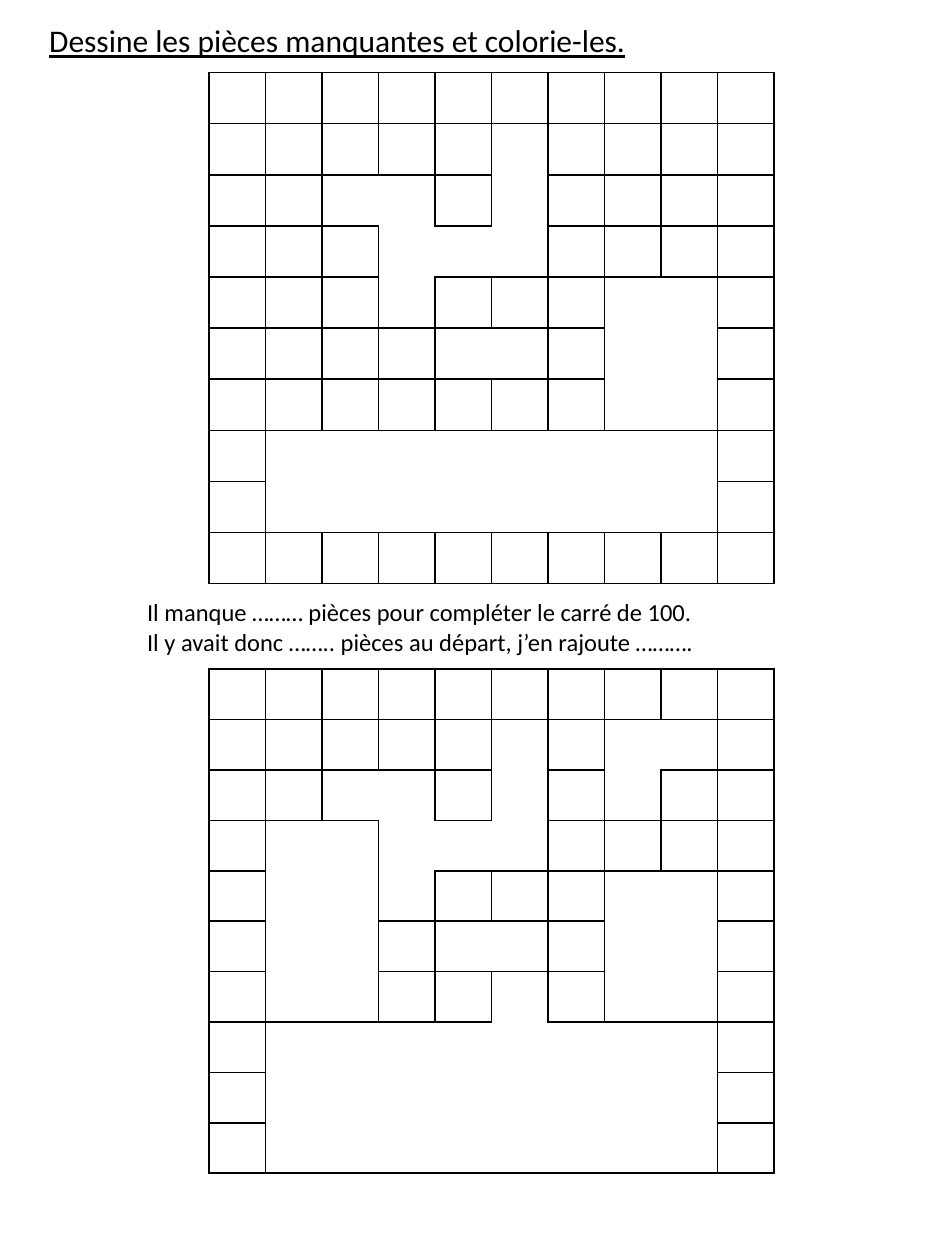
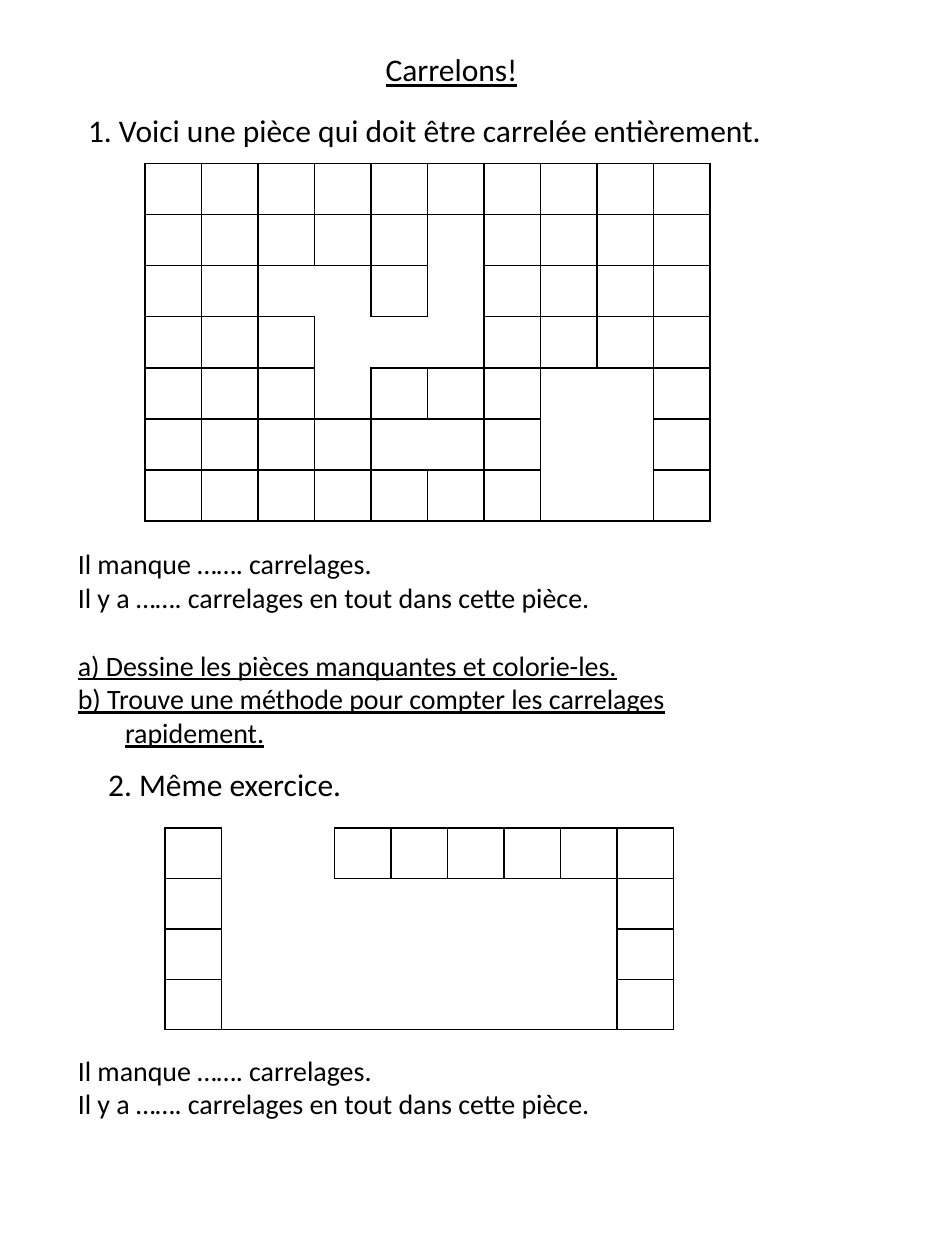
from dataclasses import dataclass

from lxml import etree
from pptx import Presentation
from pptx.dml.color import RGBColor
from pptx.enum.text import MSO_ANCHOR, MSO_AUTO_SIZE, PP_ALIGN
from pptx.oxml.ns import qn
from pptx.util import Pt

TOP, LEFT, NO_AUTOFIT = MSO_ANCHOR.TOP, PP_ALIGN.LEFT, MSO_AUTO_SIZE.NONE
TITLE_ONLY = 5


@dataclass(frozen=True)
class Theme:
    ink: str = "000000"
    font: str = "Calibri"
    heading: int = 18
    question: int = 16
    note: int = 14
    tile_width: float = 32.3
    line: float = 1


THEME = Theme()


def write(shape, box, lines, size, underlined=(), wrap=False):
    """Place a text shape and fill it; underlined holds line numbers."""
    shape.left, shape.top, shape.width, shape.height = map(Pt, box)
    frame = shape.text_frame
    frame.text = "\n".join(lines)
    frame.auto_size, frame.word_wrap = NO_AUTOFIT, wrap
    frame.vertical_anchor = TOP
    for number, paragraph in enumerate(frame.paragraphs):
        paragraph.alignment = LEFT
        font = paragraph.font
        font.name, font.size = THEME.font, Pt(size)
        font.color.rgb = RGBColor.from_string(THEME.ink)
        font.underline = number in underlined
    return frame.paragraphs


def add_tiling(slide, left, top, tile_height, plan, above=""):
    """Draw a plan of tiles: '.' is a tile, equal letters form one hole."""
    rows, columns = len(plan), len(plan[0])
    edge = "." * (columns + 2)
    padded = [f".{above}." if above else edge, *(f".{row}." for row in plan), edge]
    table = slide.shapes.add_table(
        rows, columns, Pt(left), Pt(top),
        Pt(columns * THEME.tile_width), Pt(rows * tile_height)).table
    table.first_row = table.horz_banding = False
    for column in table.columns:
        column.width = Pt(THEME.tile_width)
    for r, row in enumerate(table.rows, 1):
        row.height = Pt(tile_height)
        for c, cell in enumerate(row.cells, 1):
            cell.margin_top = cell.margin_bottom = 0
            properties = cell._tc.get_or_add_tcPr()
            here = padded[r][c]
            neighbours = {"lnL": padded[r][c - 1], "lnR": padded[r][c + 1],
                          "lnT": padded[r - 1][c], "lnB": padded[r + 1][c]}
            for side, neighbour in neighbours.items():
                border = etree.SubElement(properties, qn(f"a:{side}"), w=str(Pt(THEME.line)))
                if here == neighbour != ".":
                    etree.SubElement(border, qn("a:noFill"))
                else:
                    fill = etree.SubElement(border, qn("a:solidFill"))
                    etree.SubElement(fill, qn("a:srgbClr"), val=THEME.ink)
            cell.fill.background()


deck = Presentation()
deck.slide_width, deck.slide_height = Pt(540), Pt(720)
layout = deck.slide_layouts[TITLE_ONLY]

# Room plans
room = [
    "..........",
    ".....a....",
    "..aa.a....",
    "...aaa....",
    "...a...bb.",
    "....cc.bb.",
    ".......bb.",
]
hundred = room + [".dddddddd."] * 2 + [".........."]
hundred_with_more_holes = [
    "..........",
    ".....a.ee.",
    "..aa.a.e..",
    ".ffaaa....",
    ".ffa...bb.",
    ".ff.cc.bb.",
    ".ff..d.bb.",
] + [".dddddddd."] * 3
small_room = [".aa......"] + [".aaaaaaa."] * 3

# Slide 1: squares of one hundred
squares = deck.slides.add_slide(layout)
write(squares.shapes.title, (20.9, 8.6, 347.8, 51.1),
      ["Dessine les pièces manquantes et colorie-les."], THEME.heading, [0])
add_tiling(squares, 119.5, 41.5, 29.2, hundred)
write(squares.shapes.add_textbox(0, 0, 0, 0), (77, 337.7, 451.4, 41),
      ["Il manque ……… pièces pour compléter le carré de 100.",
       "Il y avait donc …….. pièces au départ, j’en rajoute ………."],
      THEME.note, wrap=True)
add_tiling(squares, 119.5, 382.4, 28.8, hundred_with_more_holes)

# Slide 2: tiling a room
tiling = deck.slides.add_slide(layout)
write(tiling.shapes.title, (213.1, 25.2, 90.7, 28.8), ["Carrelons!"], THEME.heading, [0])
for box, heading in [
    ((43.2, 59.8, 404.6, 28.8), "1. Voici une pièce qui doit être carrelée entièrement."),
    ((54.7, 433.6, 149, 28.8), "2. Même exercice."),
]:
    write(tiling.shapes.add_textbox(0, 0, 0, 0), box, [heading], THEME.heading)
add_tiling(tiling, 82.8, 93.4, 29.2, room)
add_tiling(tiling, 94.3, 473.2, 28.8, small_room, above=small_room[0])

# Questions under each room
counts = ["Il manque ……. carrelages.",
          "Il y a ……. carrelages en tout dans cette pièce."]
tasks = ["a) Dessine les pièces manquantes et colorie-les.",
         "b) Trouve une méthode pour compter les carrelages rapidement."]
questions = write(tiling.shapes.add_textbox(0, 0, 0, 0), (37.4, 308.9, 419.8, 123.8),
                  counts + tasks, THEME.question, [2, 3], wrap=True)
for task in questions[len(counts):]:
    indent = task._p.get_or_add_pPr()
    indent.set("marL", str(Pt(27)))
    indent.set("indent", str(Pt(-27)))
questions[len(counts)].space_before = Pt(19.5)
write(tiling.shapes.add_textbox(0, 0, 0, 0), (37.4, 598.3, 436.3, 46.1),
      counts, THEME.question, wrap=True)

deck.save("out.pptx")
